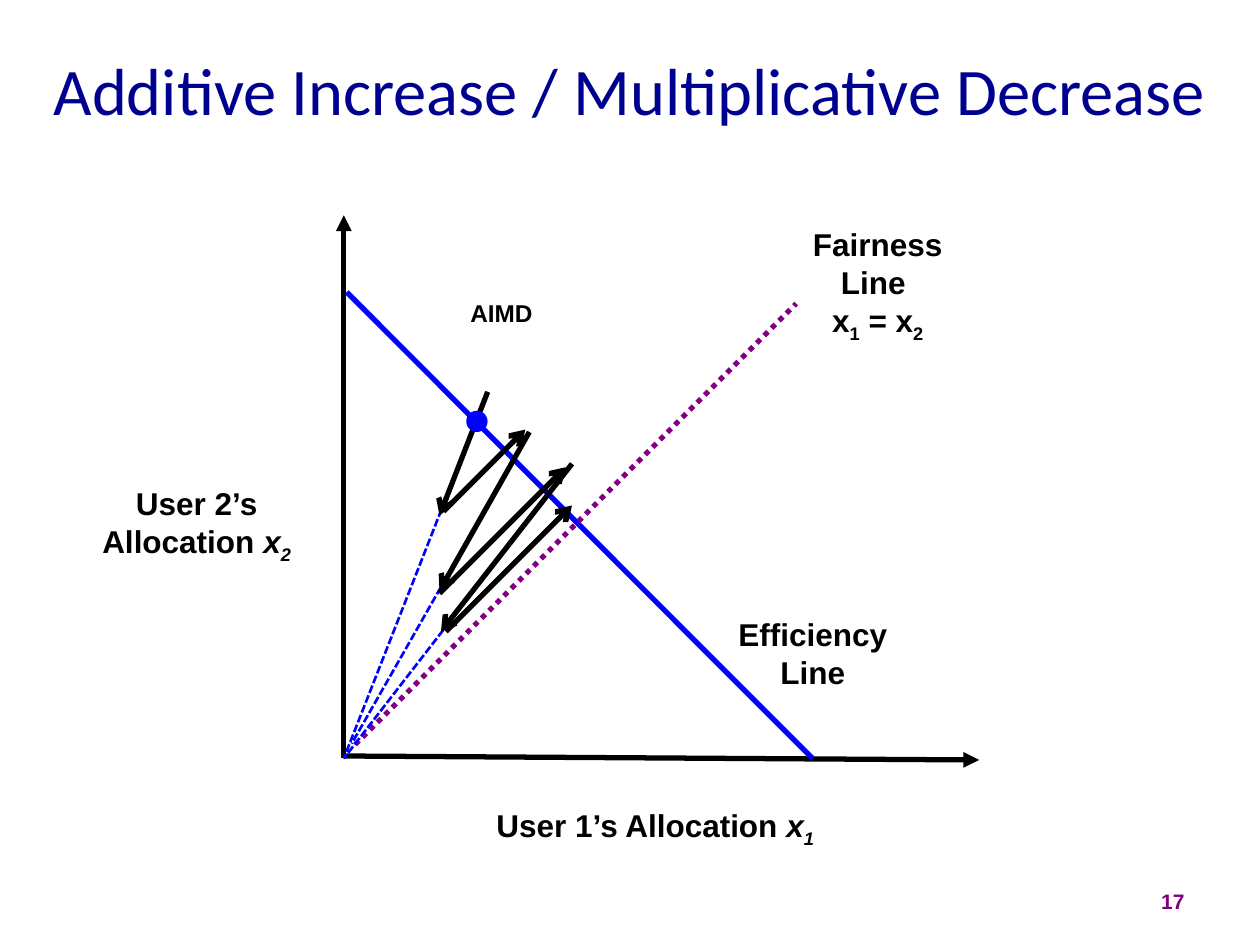
from dataclasses import dataclass
from typing import Optional

from lxml.etree import SubElement
from pptx import Presentation
from pptx.dml.color import RGBColor
from pptx.enum.dml import MSO_LINE as Dash
from pptx.enum.shapes import MSO_CONNECTOR as Link, MSO_SHAPE as Form
from pptx.enum.text import MSO_ANCHOR as Anchor, PP_ALIGN as Align
from pptx.oxml.ns import qn
from pptx.util import Cm, Pt

BLACK, BLUE, PURPLE, NAVY = "000000", "0000FF", "800080", "000090"
Point = tuple[float, float]
Box = tuple[float, float, float, float]
Run = tuple[str, str]


@dataclass
class Line:
    start: Point
    end: Point
    color: str = BLACK
    width: float = 3
    dash: Optional[Dash] = None
    head: str = ""


@dataclass
class Label:
    box: Box
    lines: list[list[Run]]
    size: float = 18
    wrap: bool = True


@dataclass
class Cycle:
    peak: Point
    low: Point
    root: Point
    base: Point
    top: Point


ORIGIN = (6.93, 15.29)
AXES = [
    Line(ORIGIN, (6.93, 4.34), head="triangle"),
    Line((6.96, 15.24), (19.74, 15.32), head="triangle"),
    Line((6.99, 5.89), (16.38, 15.29), BLUE),
    Line((7.16, 15.01), (16.05, 6.12), PURPLE, dash=Dash.ROUND_DOT),
]
LABELS = [
    Label((14.53, 12.27, 3.71, 1.8), [[("Efficiency Line", "")]]),
    Label((9.5, 16.13, 7.42, 1.02),
          [[("User 1’s Allocation ", ""), ("x", "i"), ("1", "i_")]]),
    Label((1.73, 9.63, 4.47, 1.8),
          [[("User 2’s Allocation ", ""), ("x", "i"), ("2", "i_")]]),
    Label((15.88, 4.42, 3.63, 2.57),
          [[("Fairness Line ", "")],
           [("x", ""), ("1", "_"), (" = x", ""), ("2", "_")]]),
    Label((9.12, 5.31, 1.98, 0.94), [[("AIMD", "_")]], 24, False),
]
CYCLES = [
    Cycle((9.83, 7.9), (8.86, 10.39), ORIGIN, (8.94, 10.31), (10.59, 8.66)),
    Cycle((10.67, 8.71), (8.86, 11.91), (7.09, 14.99), (8.86, 11.96), (11.4, 9.42)),
    Cycle((11.53, 9.35), (8.89, 12.73), ORIGIN, (8.99, 12.73), (11.53, 10.19)),
]


def paint(target, color: str) -> None:
    target.rgb = RGBColor.from_string(color)


def draw_line(slide, line: Line) -> None:
    ends = [Cm(v) for v in line.start + line.end]
    link = slide.shapes.add_connector(Link.STRAIGHT, *ends)
    paint(link.line.color, line.color)
    link.line.width = Pt(line.width)
    if line.dash:
        link.line.dash_style = line.dash
    props = link._element.spPr
    if line.head:
        SubElement(props.find(qn("a:ln")), qn("a:tailEnd"), type=line.head)
    SubElement(props, qn("a:effectLst"))


def add_text(slide, box: Box, lines: list[list[Run]], *, size: float = 18,
             font: str = "Arial", color: str = BLACK, bold: bool = True,
             align: Align = Align.CENTER, anchor: Anchor = Anchor.TOP,
             wrap: bool = True) -> None:
    frame = slide.shapes.add_textbox(*[Cm(v) for v in box]).text_frame
    frame.word_wrap = wrap
    frame.vertical_anchor = anchor
    for n, runs in enumerate(lines):
        para = frame.add_paragraph() if n else frame.paragraphs[0]
        para.alignment = align
        for text, style in runs:
            run = para.add_run()
            run.text = text
            run.font.name = font
            run.font.size = Pt(size)
            run.font.bold = bold
            run.font.italic = "i" in style
            paint(run.font.color, color)
            if "_" in style:
                run.font._element.set("baseline", "-25000")


def add_dot(slide, left: float, top: float, size: float) -> None:
    dot = slide.shapes.add_shape(Form.OVAL, Cm(left), Cm(top), Cm(size), Cm(size))
    dot.shadow.inherit = False
    dot.fill.solid()
    paint(dot.fill.fore_color, BLUE)
    dot.line.fill.background()


def main() -> None:
    deck = Presentation()
    deck.slide_width, deck.slide_height = Cm(25.4), Cm(19.05)
    slide = deck.slides.add_slide(deck.slide_layouts[6])
    add_text(slide, (18.21, 17.65, 5.92, 1.02), [[("17", "")]], size=12,
             color=PURPLE, align=Align.RIGHT, anchor=Anchor.MIDDLE)
    add_text(slide, (0, 0.2, 25.4, 3.18),
             [[("Additive Increase / Multiplicative Decrease", "")]], size=38,
             font="Calibri", color=NAVY, bold=False, anchor=Anchor.MIDDLE)
    for line in AXES:
        draw_line(slide, line)
    for label in LABELS:
        add_text(slide, label.box, label.lines, size=label.size, wrap=label.wrap)
    for turn in CYCLES:
        draw_line(slide, Line(turn.peak, turn.root, BLUE, 1.5, Dash.SQUARE_DOT))
        draw_line(slide, Line(turn.peak, turn.low, head="arrow"))
    add_dot(slide, 9.4, 8.28, 0.43)
    for turn in CYCLES:
        draw_line(slide, Line(turn.base, turn.top, head="arrow"))
    deck.save("out.pptx")


if __name__ == "__main__":
    main()
